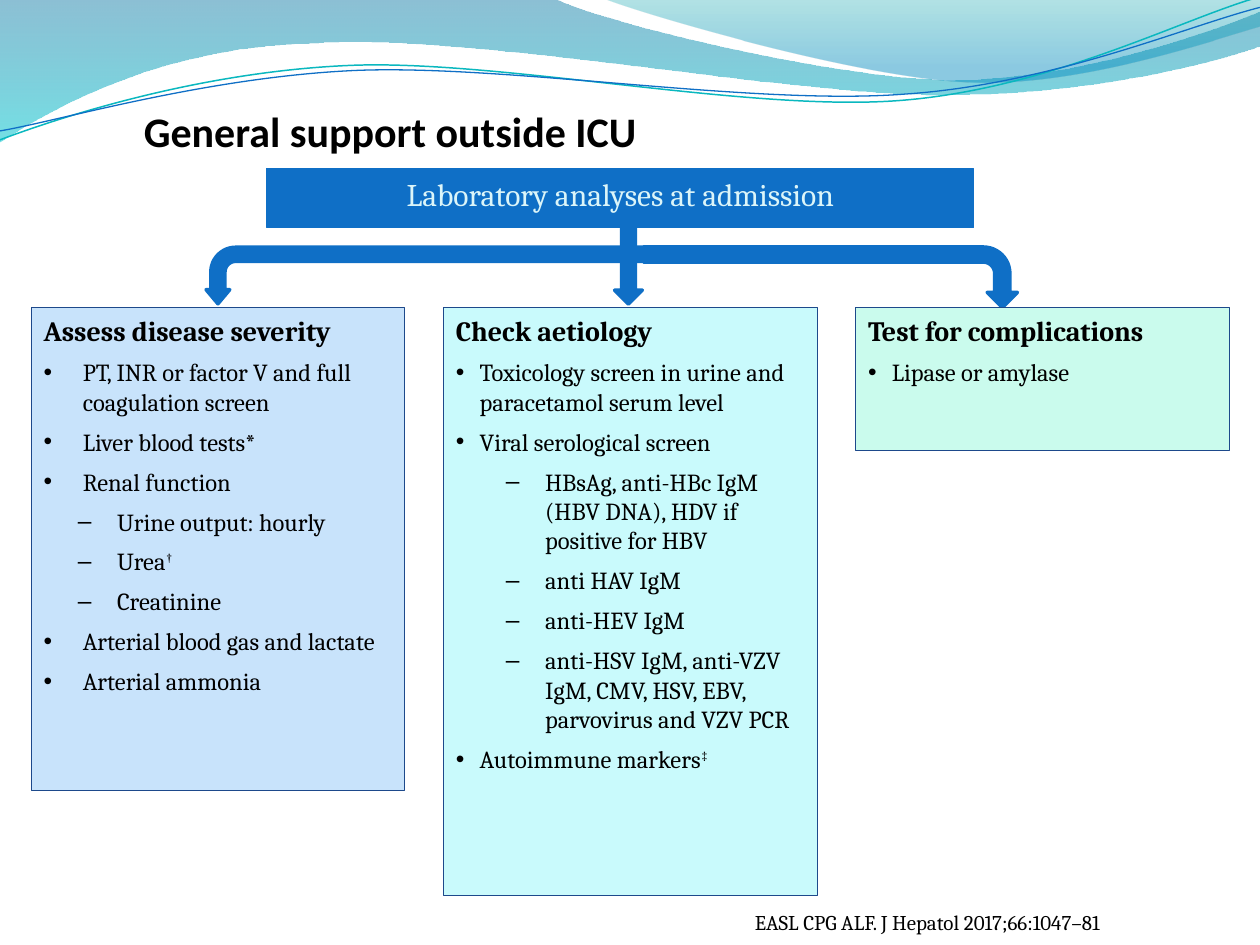
from dataclasses import dataclass

from lxml.etree import SubElement
from pptx import Presentation
from pptx.dml.color import RGBColor
from pptx.enum.shapes import MSO_SHAPE as Preset
from pptx.enum.text import MSO_ANCHOR as Anchor, PP_ALIGN as Align
from pptx.oxml.ns import qn
from pptx.util import Cm, Pt

BLUE, BLACK = "0F6FC6", "000000"
PANEL_TOP, PANEL_WIDTH, PANEL_LEFT, PANEL_PITCH = 6.19, 7.53, 0.63, 8.31
HANGING = 0.79


@dataclass
class Item:
    text: str
    mark: str = ""
    nested: bool = False


@dataclass
class Panel:
    heading: str
    fill: str
    height: float
    indent: float
    nested_indent: float
    items: list[Item]


@dataclass
class Stop:
    position: float
    color: str
    opacity: int


@dataclass
class Wave:
    """Points in cm: a pair is a straight segment, six numbers are a Bézier curve."""
    start: tuple
    segments: list[tuple]
    stops: tuple = ()
    line: str = ""
    line_width: float = 0


WAVES = [
    Wave((0, 0), [
        (11.18, -0.03), (12.09, 0.43, 16.87, 1.6, 19.25, 1.6),
        (21.67, 1.6, 24.33, 0.66, 25.4, 0.23), (25.43, 0.91),
        (24.97, 1.12, 22.1, 1.93, 18.95, 1.91),
        (15.8, 1.91, 9.7, 0.71, 6.53, 0.86),
        (3.28, 0.91, 1.17, 2.11, -0.03, 2.87)],
        (Stop(0, "0074A1", 45), Stop(1, "00C6CF", 55))),
    Wave((12.17, -0.03), [
        (12.93, 0.28, 17.32, 1.57, 19.53, 1.65),
        (21.74, 1.75, 24.41, 0.81, 25.4, 0.53), (25.4, 0)],
        (Stop(0, "00A1A9", 30), Stop(0.8, "008BBF", 45))),
    Wave((0, 2.82), [
        (1.22, 2.36, 4.01, 1.45, 7.04, 1.32),
        (10.03, 1.19, 15.06, 2.26, 18.11, 2.03),
        (21.16, 1.8, 23.83, 0.38, 25.35, -0.05)],
        line="0AB8BF", line_width=0.85),
    Wave((0, 2.64), [
        (1.19, 2.44, 4.17, 1.55, 7.19, 1.42),
        (10.24, 1.3, 15.16, 2.13, 18.21, 1.9),
        (21.23, 1.7, 23.9, 0.53, 25.4, 0.15)],
        line=BLUE, line_width=0.75),
]

PANELS = [
    Panel("Assess disease severity", "C8E3FB", 9.75, HANGING, 1.48, [
        Item("PT, INR or factor V and full coagulation screen"),
        Item("Liver blood tests*"),
        Item("Renal function"),
        Item("Urine output: hourly", nested=True),
        Item("Urea", "†", nested=True),
        Item("Creatinine", nested=True),
        Item("Arterial blood gas and lactate"),
        Item("Arterial ammonia")]),
    Panel("Check aetiology", "C9FAFC", 11.86, 0.48, 1.8, [
        Item("Toxicology screen in urine and paracetamol serum level"),
        Item("Viral serological screen"),
        Item("HBsAg, anti-HBc IgM (HBV DNA), HDV if positive for HBV", nested=True),
        Item("anti HAV IgM", nested=True),
        Item("anti-HEV IgM", nested=True),
        Item("anti-HSV IgM, anti-VZV IgM, CMV, HSV, EBV, parvovirus and VZV PCR",
             nested=True),
        Item("Autoimmune markers", "‡")]),
    Panel("Test for complications", "CAFBED", 2.89, 0.48, 1.8, [
        Item("Lipase or amylase")]),
]


def rgb(color: str) -> RGBColor:
    return RGBColor.from_string(color)


def add_run(paragraph, text: str, size: float, color: str = BLACK,
            font: str = "Cambria", bold: bool = False, raised: bool = False) -> None:
    run = paragraph.add_run()
    run.text = text
    run.font.size, run.font.name, run.font.bold = Pt(size), font, bold
    run.font.color.rgb = rgb(color)
    if raised:
        run.font._element.set("baseline", "30000")


def bend_segments(shape, segments: list[tuple]) -> None:
    """Turn the straight segments that have control points into Bézier curves."""
    straight = list(shape.element.spPr.iter(qn("a:lnTo")))
    for element, segment in zip(straight, segments):
        if len(segment) == 2:
            continue
        element.tag = qn("a:cubicBezTo")
        for child in list(element):
            element.remove(child)
        for x, y in zip(segment[::2], segment[1::2]):
            point = SubElement(element, qn("a:pt"))
            point.set("x", str(Cm(x) - shape.left))
            point.set("y", str(Cm(y) - shape.top))


def draw_wave(slide, wave: Wave) -> None:
    builder = slide.shapes.build_freeform(Cm(wave.start[0]), Cm(wave.start[1]))
    ends = [(Cm(segment[-2]), Cm(segment[-1])) for segment in wave.segments]
    builder.add_line_segments(ends, close=bool(wave.stops))
    shape = builder.convert_to_shape()
    bend_segments(shape, wave.segments)
    shape.shadow.inherit = False
    if not wave.stops:
        shape.fill.background()
        shape.line.color.rgb = rgb(wave.line)
        shape.line.width = Pt(wave.line_width)
        return
    shape.fill.gradient()
    shape.fill.gradient_angle = 270
    for target, stop in zip(shape.fill.gradient_stops, wave.stops):
        target.position, target.color.rgb = stop.position, rgb(stop.color)
    colors = list(shape.element.spPr.iter(qn("a:srgbClr")))
    for color, stop in zip(colors, wave.stops):
        SubElement(color, qn("a:alpha")).set("val", str(stop.opacity * 1000))
    shape.line.fill.background()


def draw_shape(slide, preset, left: float, top: float, width: float, height: float,
               fill: str = BLUE, line: str = BLUE, line_width: float = 2):
    shape = slide.shapes.add_shape(preset, Cm(left), Cm(top), Cm(width), Cm(height))
    shape.shadow.inherit = False
    shape.fill.solid()
    shape.fill.fore_color.rgb = rgb(fill)
    shape.line.color.rgb = rgb(line)
    shape.line.width = Pt(line_width)
    return shape


def draw_arrows(slide) -> None:
    right = draw_shape(slide, Preset.BENT_ARROW, 16.13, 1.82, 1.22, 7.54)
    right.rotation = 90
    left = draw_shape(slide, Preset.BENT_ARROW, 8.31, 0.83, 1.14, 9.45)
    left.rotation = 270
    left.adjustments[1] = 0.21
    left.element.spPr.find(qn("a:xfrm")).set("flipH", "1")
    draw_shape(slide, Preset.DOWN_ARROW, 12.39, 3.72, 0.56, 2.41)


def set_bullet(paragraph, character: str, indent: float, hanging: float) -> None:
    properties = paragraph._element.get_or_add_pPr()
    properties.set("marL", str(Cm(indent)))
    properties.set("indent", str(-Cm(hanging)))
    SubElement(properties, qn("a:buFont")).set("typeface", "Arial")
    SubElement(properties, qn("a:buChar")).set("char", character)


def draw_panel(slide, panel: Panel, left: float) -> None:
    shape = draw_shape(slide, Preset.RECTANGLE, left, PANEL_TOP, PANEL_WIDTH,
                       panel.height, panel.fill, "1D498B", 0.25)
    frame = shape.text_frame
    frame.word_wrap, frame.vertical_anchor = True, Anchor.TOP
    add_run(frame.paragraphs[0], panel.heading, 16, bold=True)
    for item in panel.items:
        paragraph = frame.add_paragraph()
        if item.nested:
            set_bullet(paragraph, "–", panel.nested_indent, HANGING)
        else:
            set_bullet(paragraph, "•", panel.indent, panel.indent)
        add_run(paragraph, item.text, 14)
        if item.mark:
            add_run(paragraph, item.mark, 14, raised=True)
    for paragraph in frame.paragraphs:
        paragraph.alignment, paragraph.space_after = Align.LEFT, Pt(6)


def add_label(slide, text: str, top: float, width: float, height: float,
              indent: float, bottom: float, **style) -> None:
    """Add a bottom-anchored line of text that starts at the given indent."""
    box = slide.shapes.add_textbox(0, Cm(top), Cm(width), Cm(height))
    frame = box.text_frame
    frame.word_wrap, frame.vertical_anchor = True, Anchor.BOTTOM
    frame.margin_left, frame.margin_right = Cm(indent), 0
    frame.margin_bottom = Cm(bottom)
    add_run(frame.paragraphs[0], text, **style)


def main() -> None:
    presentation = Presentation()
    presentation.slide_width, presentation.slide_height = Cm(25.4), Cm(19.05)
    slide = presentation.slides.add_slide(presentation.slide_layouts[6])
    for wave in WAVES:
        draw_wave(slide, wave)
    add_label(slide, "General support outside ICU", 0, 22.86, 3.18, 2.9, 0.04,
              size=24, font="Calibri", bold=True)
    add_label(slide, "EASL CPG ALF. J Hepatol 2017;66:1047–81", 18.03, 25.4, 1.02,
              15.22, 0.2, size=12)
    draw_arrows(slide)
    banner = draw_shape(slide, Preset.RECTANGLE, 5.38, 3.4, 14.25, 1.19, line_width=0.75)
    banner.text_frame.vertical_anchor = Anchor.TOP
    heading = banner.text_frame.paragraphs[0]
    heading.alignment = Align.CENTER
    add_run(heading, "Laboratory analyses at admission", 18, "DBF5F9")
    for column, panel in enumerate(PANELS):
        draw_panel(slide, panel, PANEL_LEFT + column * PANEL_PITCH)
    presentation.save("out.pptx")


if __name__ == "__main__":
    main()
